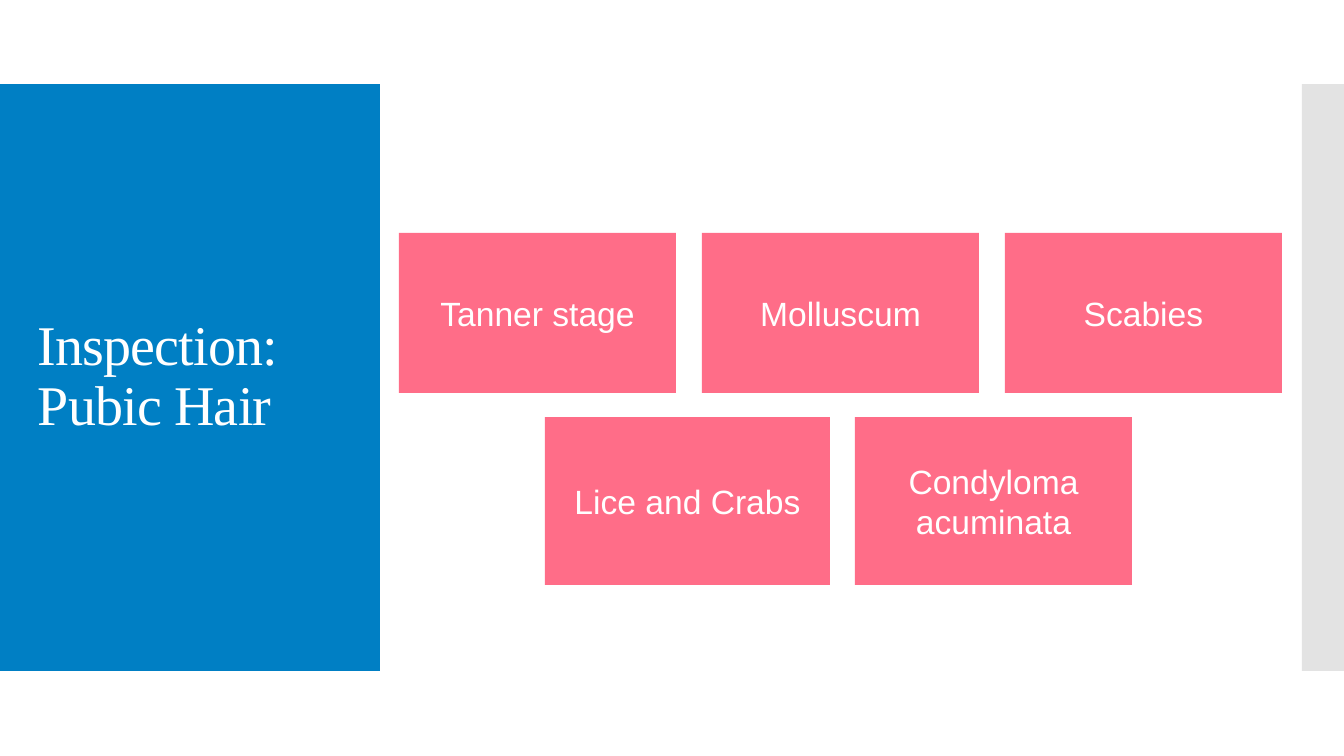
from dataclasses import dataclass
from lxml import etree
from pptx import Presentation
from pptx import util as u
from pptx.dml.color import RGBColor
from pptx.enum import shapes, text
from pptx.oxml.ns import qn


@dataclass(frozen=True)
class Theme:
    blue: str = "007FC4"
    grey: str = "C8C8C8"
    pink: str = "FF6D88"
    white: str = "FFFFFF"
    serif: str = "Times New Roman"
    sans: str = "Arial"
    head: int = 40
    body: int = 24


@dataclass(frozen=True)
class Box:
    left: int
    top: int
    width: int
    height: int
    fill: str
    label: str = ""


THEME = Theme()


def px(n: int) -> int:
    return round(n * 914400 / 100.8)


def style(frame, face: str, size: int) -> None:
    frame.word_wrap = True
    frame.vertical_anchor = text.MSO_ANCHOR.MIDDLE
    font = frame.paragraphs[0].runs[0].font
    font.name = face
    font.size = u.Pt(size)
    font.color.rgb = RGBColor.from_string(THEME.white)


def draw(slide, box: Box):
    shape = slide.shapes.add_shape(
        shapes.MSO_SHAPE.RECTANGLE,
        px(box.left), px(box.top), px(box.width), px(box.height))
    shape.shadow.inherit = False
    shape.fill.solid()
    shape.fill.fore_color.rgb = RGBColor.from_string(box.fill)
    shape.line.fill.background()
    if box.label:
        frame = shape.text_frame
        frame.text = box.label
        frame.paragraphs[0].alignment = text.PP_ALIGN.CENTER
        style(frame, THEME.sans, THEME.body)
    return shape


def fade(shape, share: int) -> None:
    color = shape.fill._xPr.find(qn("a:solidFill"))[0]
    etree.SubElement(color, qn("a:alpha")).set("val", str(share * 1000))


def title(slide, words: str) -> None:
    frame = slide.shapes.add_textbox(px(28), px(124), px(325), px(507)).text_frame
    frame.text = words
    style(frame, THEME.serif, THEME.head)
    line = frame.paragraphs[0]
    line.line_spacing = 0.9
    line.runs[0].font._element.set("spc", "-60")


def main() -> None:
    deck = Presentation()
    deck.slide_width, deck.slide_height = px(1344), px(756)
    slide = deck.slides.add_slide(deck.slide_layouts[6])

    draw(slide, Box(0, 84, 380, 587, THEME.blue))
    fade(draw(slide, Box(1302, 84, 42, 587, THEME.grey)), 50)
    title(slide, "Inspection: Pubic Hair")

    upper = ("Tanner stage", "Molluscum", "Scabies")
    cards = [Box(399 + 303 * i, 233, 277, 160, THEME.pink, name)
             for i, name in enumerate(upper)]
    cards += [Box(545, 417, 285, 168, THEME.pink, "Lice and Crabs"),
              Box(855, 417, 277, 168, THEME.pink, "Condyloma acuminata")]
    for card in cards:
        draw(slide, card)

    deck.save("out.pptx")


if __name__ == "__main__":
    main()
